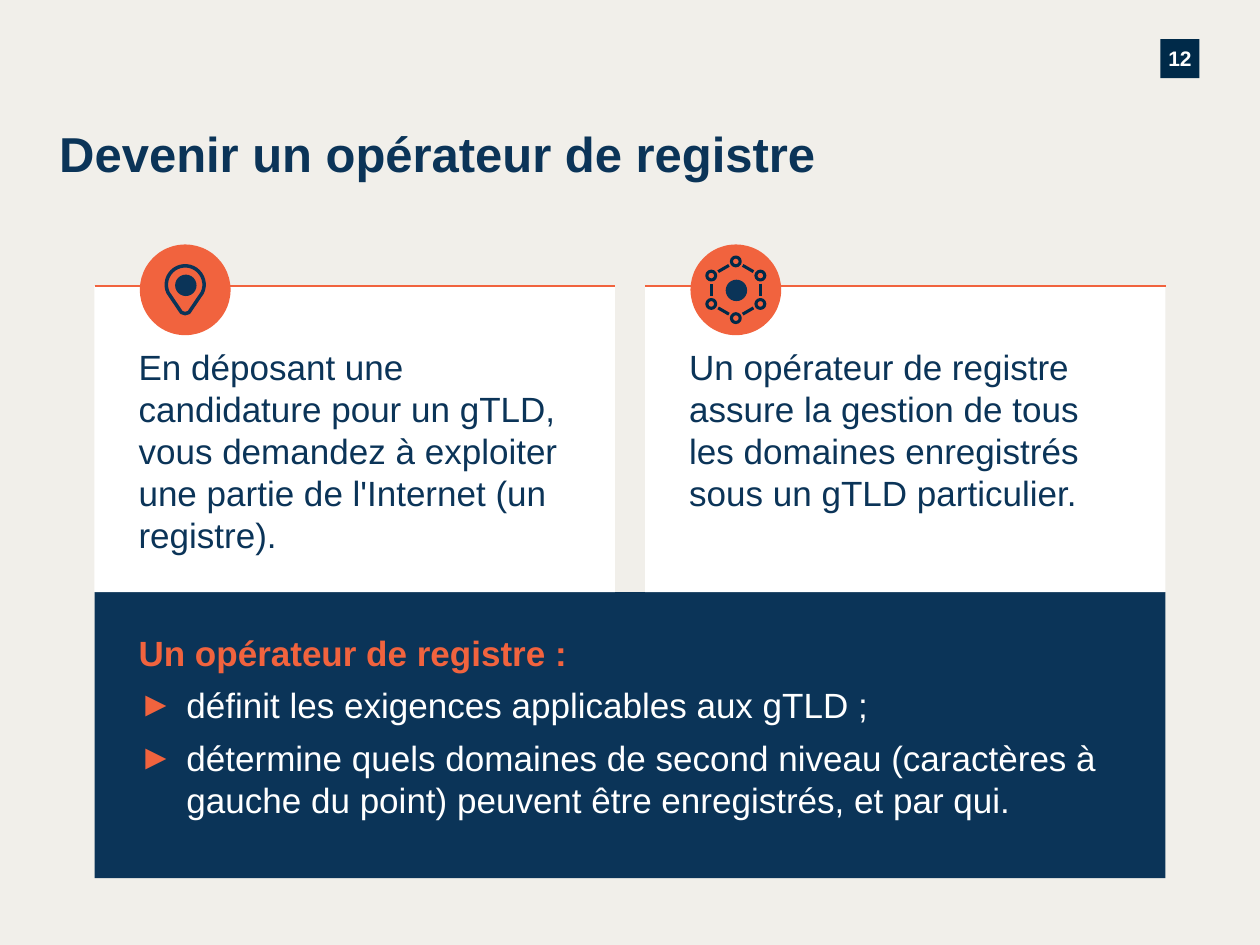
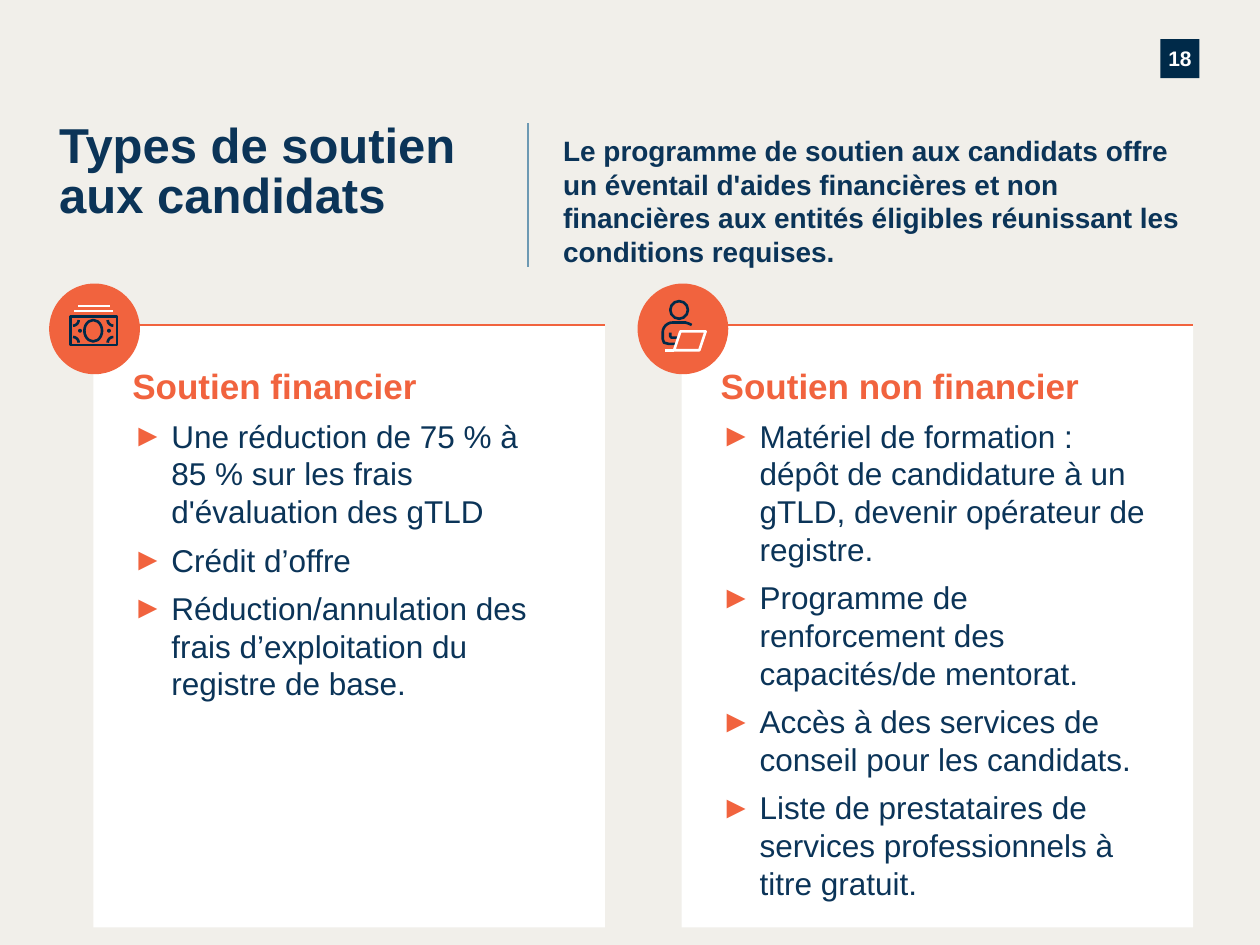
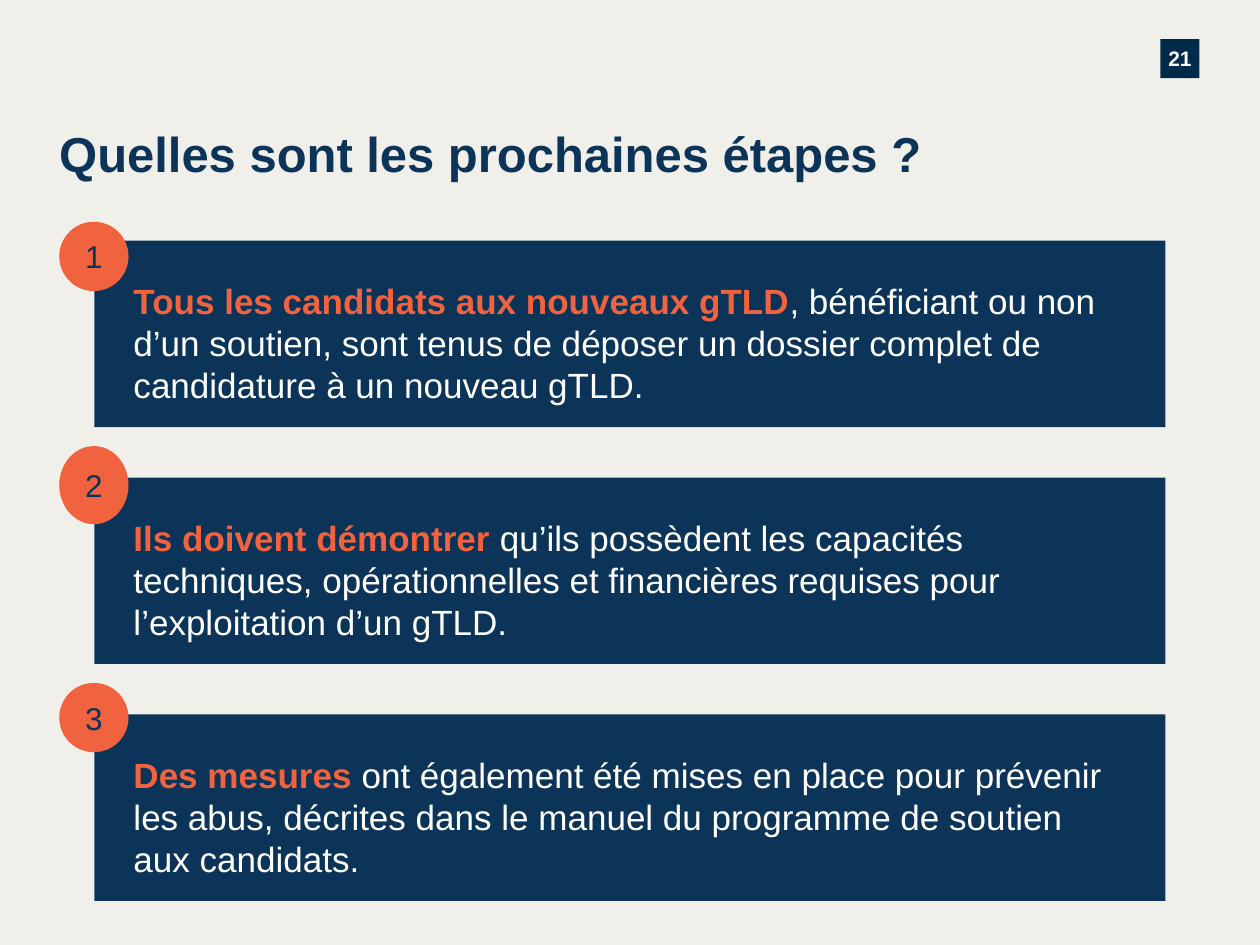
"""Build three slides on becoming a gTLD registry operator and on applicant support."""
from math import cos, radians, sin

from lxml.etree import SubElement
from pptx import Presentation
from pptx.dml.color import RGBColor
from pptx.enum.shapes import MSO_CONNECTOR, MSO_SHAPE
from pptx.enum.text import MSO_ANCHOR, MSO_AUTO_SIZE, PP_ALIGN
from pptx.oxml.ns import qn
from pptx.util import Inches, Pt

CREAM = RGBColor(0xF1, 0xEF, 0xEA)
NAVY = RGBColor(0x0B, 0x34, 0x58)
INK = RGBColor(0x00, 0x2A, 0x49)
ORANGE = RGBColor(0xF1, 0x63, 0x3E)
STEEL = RGBColor(0x6D, 0x99, 0xB3)
WHITE = RGBColor(0xFF, 0xFF, 0xFF)
FONT = "Arial"


def style(shape, fill=None, line=None, width=0, paragraphs=(), insets=(0, 0, 0, 0),
          align=PP_ALIGN.LEFT, anchor=MSO_ANCHOR.TOP, bullet_indent=0):
    """Paint a shape and write paragraphs of (text, size, colour, bold) spans; bullets follow the first."""
    shape.shadow.inherit = False
    if fill is None:
        shape.fill.background()
    else:
        shape.fill.solid()
        shape.fill.fore_color.rgb = fill
    if line is None:
        shape.line.fill.background()
    else:
        shape.line.color.rgb = line
        shape.line.width = Pt(width)
    if not paragraphs:
        return
    frame = shape.text_frame
    frame.word_wrap = True
    frame.auto_size = MSO_AUTO_SIZE.NONE
    frame.vertical_anchor = anchor
    frame.margin_left, frame.margin_top, frame.margin_right, frame.margin_bottom = map(Inches, insets)
    for number, spans in enumerate(paragraphs):
        para = frame.add_paragraph() if number else frame.paragraphs[0]
        properties = para._p.get_or_add_pPr()
        indent = Inches(bullet_indent) if number else 0
        properties.set("marL", str(indent))
        properties.set("indent", str(-indent))
        if number:
            bullet_color = SubElement(properties, qn("a:buClr"))
            SubElement(bullet_color, qn("a:srgbClr")).set("val", str(ORANGE))
            SubElement(properties, qn("a:buFont")).set("typeface", FONT)
            SubElement(properties, qn("a:buChar")).set("char", "►")
        else:
            SubElement(properties, qn("a:buNone"))
        para.alignment = align
        para.space_before = Pt(6 if number else 0)
        for text, size, color, bold in spans:
            span = para.add_run()
            span.text = text
            span.font.name = FONT
            span.font.size = Pt(size)
            span.font.bold = bold
            span.font.color.rgb = color


def draw_stroke(page, points, color, width, closed=False):
    """Draw a connector through two points, or an outline through more."""
    corners = [(Inches(x), Inches(y)) for x, y in points]
    if len(corners) == 2:
        stroke = page.shapes.add_connector(MSO_CONNECTOR.STRAIGHT, *corners[0], *corners[1])
        stroke.line.color.rgb = color
        stroke.line.width = Pt(width)
        SubElement(stroke._element.spPr, qn("a:effectLst"))
    else:
        builder = page.shapes.build_freeform(*corners[0])
        builder.add_line_segments(corners[1:], close=closed)
        style(builder.convert_to_shape(), line=color, width=width)


deck = Presentation()
deck.slide_width, deck.slide_height = Inches(10), Inches(7.5)
background = deck.slide_master.background.fill
background.solid()
background.fore_color.rgb = CREAM

pages = []
for number, heading, layout, title_width, title_height in [
    ("12", "Devenir un opérateur de registre", 1, 7.18, 0.57),
    ("18", "Types de soutien aux candidats", 3, 3.71, 0.92),
    ("21", "Quelles sont les prochaines étapes ?", 5, 7.57, 0.55),
]:
    page = deck.slides.add_slide(deck.slide_layouts[layout])
    title = page.shapes.title
    title.left, title.top, title.width, title.height = map(Inches, (0.47, 0.98, title_width, title_height))
    style(title, paragraphs=[[(heading, 28, NAVY, True)]])
    badge = page.shapes.add_shape(MSO_SHAPE.RECTANGLE, *map(Inches, (9.21, 0.31, 0.31, 0.31)))
    style(badge, INK, paragraphs=[[(number, 12, WHITE, True)]],
          align=PP_ALIGN.CENTER, anchor=MSO_ANCHOR.MIDDLE)
    pages.append(page)
operator_page, support_page, steps_page = pages

for left, text in [
    (0.75, "En déposant une candidature pour un gTLD, vous demandez à exploiter une partie "
           "de l'Internet (un registre)."),
    (5.12, "Un opérateur de registre assure la gestion de tous les domaines enregistrés sous "
           "un gTLD particulier."),
]:
    card = operator_page.shapes.add_shape(MSO_SHAPE.RECTANGLE, *map(Inches, (left, 2.27, 4.13, 2.43)))
    style(card, WHITE, paragraphs=[[(text, 20, NAVY, False)]], insets=(0.35, 0.47, 0.39, 0.3))
    draw_stroke(operator_page, [(left, 2.27), (left + 4.13, 2.27)], ORANGE, 1.25)
    disc = operator_page.shapes.add_shape(MSO_SHAPE.OVAL, *map(Inches, (left + 0.36, 1.94, 0.72, 0.72)))
    style(disc, ORANGE)

duties = operator_page.placeholders[1]
duties.left, duties.top, duties.width, duties.height = map(Inches, (0.75, 4.7, 8.5, 2.27))
style(duties, NAVY, paragraphs=[
    [("Un opérateur de registre :", 20, ORANGE, True)],
    [("définit les exigences applicables aux gTLD ;", 20, WHITE, False)],
    [("détermine quels domaines de second niveau (caractères à gauche du point) peuvent "
      "être enregistrés, et par qui.", 20, WHITE, False)],
], insets=(0.35, 0.31, 0.47, 0.3), bullet_indent=0.38)

for center_x, center_y in [(1.47, 2.26), (5.84, 2.3)]:
    dot = operator_page.shapes.add_shape(
        MSO_SHAPE.OVAL, *map(Inches, (center_x - 0.08, center_y - 0.08, 0.17, 0.17)))
    style(dot, NAVY)

pin_arc = [(1.47 + 0.15 * cos(radians(angle)), 2.26 + 0.15 * sin(radians(angle)))
           for angle in range(155, 386, 10)]
draw_stroke(operator_page, pin_arc + [(1.5, 2.48), (1.47, 2.49), (1.44, 2.48)], NAVY, 2, closed=True)

nodes = [(5.84 + 0.225 * cos(radians(angle)), 2.3 + 0.225 * sin(radians(angle)))
         for angle in range(-90, 270, 60)]
for (x, y), (next_x, next_y) in zip(nodes, nodes[1:] + nodes[:1]):
    link = [(x + (next_x - x) * share, y + (next_y - y) * share) for share in (0.28, 0.72)]
    draw_stroke(operator_page, link, INK, 1.75)
    node = operator_page.shapes.add_shape(MSO_SHAPE.OVAL, *map(Inches, (x - 0.035, y - 0.035, 0.07, 0.07)))
    style(node, line=INK, width=1.75)

for index, (left, heading, items) in enumerate([
    (0.74, "Soutien financier", [
        "Une réduction de 75 % à 85 % sur les frais d'évaluation des gTLD",
        "Crédit d’offre",
        "Réduction/annulation des frais d’exploitation du registre de base.",
    ]),
    (5.41, "Soutien non financier", [
        "Matériel de formation : dépôt de candidature à un gTLD, devenir opérateur de registre.",
        "Programme de renforcement des capacités/de mentorat.",
        "Accès à des services de conseil pour les candidats.",
        "Liste de prestataires de services professionnels à titre gratuit.",
    ]),
], start=1):
    card = support_page.placeholders[index]
    card.left, card.top, card.width, card.height = map(Inches, (left, 2.58, 4.06, 4.78))
    style(card, WHITE, insets=(0.31, 0.31, 0.35, 0.3), bullet_indent=0.31,
          paragraphs=[[(heading, 20, ORANGE, True)]] + [[(item, 18, NAVY, False)] for item in items])
    draw_stroke(support_page, [(left, 2.58), (left + 4.06, 2.58)], ORANGE, 1.25)
    disc = support_page.shapes.add_shape(MSO_SHAPE.OVAL, *map(Inches, (left - 0.35, 2.25, 0.72, 0.72)))
    style(disc, ORANGE)

summary = support_page.shapes.add_textbox(*map(Inches, (4.47, 1.06, 4.94, 1.06)))
style(summary, paragraphs=[[(
    "Le programme de soutien aux candidats offre un éventail d'aides financières et non "
    "financières aux entités éligibles réunissant les conditions requises.", 16, NAVY, True)]])
support_page.shapes.title.text_frame.paragraphs[0].line_spacing = Pt(28.6)
draw_stroke(support_page, [(4.19, 0.98), (4.19, 2.12)], STEEL, 1.25)

for preset, *place in [
    (MSO_SHAPE.RECTANGLE, 0.56, 2.51, 0.37, 0.23),
    (MSO_SHAPE.OVAL, 0.67, 2.54, 0.14, 0.17),
    (MSO_SHAPE.OVAL, 0.63, 2.62, 0.01, 0.01),
    (MSO_SHAPE.OVAL, 0.86, 2.62, 0.01, 0.01),
    (MSO_SHAPE.OVAL, 5.32, 2.39, 0.14, 0.14),
]:
    outline = support_page.shapes.add_shape(preset, *map(Inches, place))
    style(outline, line=INK, width=1.5)

for corner_x, corner_y, start in [(0.58, 2.54, 0), (0.9, 2.54, 90), (0.9, 2.72, 180), (0.58, 2.72, 270)]:
    arc = [(corner_x + 0.045 * cos(radians(angle)), corner_y + 0.045 * sin(radians(angle)))
           for angle in range(start, start + 91, 15)]
    draw_stroke(support_page, arc, INK, 1.5)

shoulder = [(5.34 + 0.08 * cos(radians(angle)), 2.64 + 0.08 * sin(radians(angle)))
            for angle in range(270, 179, -15)]
torso = [(5.49, 2.58), (5.47, 2.57), (5.44, 2.56)] + shoulder
torso += [(5.26, 2.69), (5.27, 2.72), (5.31, 2.73), (5.37, 2.73)]
for points, color, closed in [
    ([(0.59, 2.47), (0.9, 2.47)], WHITE, False),
    ([(0.62, 2.43), (0.87, 2.43)], WHITE, False),
    ([(5.38, 2.68), (5.33, 2.68), (5.32, 2.67), (5.32, 2.64)], INK, False),
    (torso, INK, False),
    ([(5.28, 2.78), (5.35, 2.78)], WHITE, False),
    ([(5.4, 2.63), (5.35, 2.78), (5.55, 2.78), (5.6, 2.63)], WHITE, True),
]:
    draw_stroke(support_page, points, color, 1.5, closed)

for index, (lead, rest, disc_top, disc_height) in enumerate([
    ("Tous les candidats aux nouveaux gTLD",
     ", bénéficiant ou non d’un soutien, sont tenus de déposer un dossier complet de "
     "candidature à un nouveau gTLD.", 1.76, 0.55),
    ("Ils doivent démontrer ",
     "qu’ils possèdent les capacités techniques, opérationnelles et financières requises "
     "pour l’exploitation d’un gTLD.", 3.54, 0.62),
    ("Des mesures",
     " ont également été mises en place pour prévenir les abus, décrites dans le manuel du "
     "programme de soutien aux candidats.", 5.42, 0.55),
]):
    band = steps_page.shapes.add_shape(
        MSO_SHAPE.RECTANGLE, *map(Inches, (0.75, 1.91 + 1.88 * index, 8.5, 1.48)))
    style(band, NAVY, paragraphs=[[(lead, 20, ORANGE, True), (rest, 20, WHITE, False)]],
          insets=(0.31, 0.31, 0.35, 0.31))
    disc = steps_page.shapes.add_shape(MSO_SHAPE.OVAL, *map(Inches, (0.47, disc_top, 0.55, disc_height)))
    style(disc, ORANGE, paragraphs=[[(str(index + 1), 18, NAVY, False)]],
          insets=(0.1, 0.05, 0.1, 0.05), align=PP_ALIGN.CENTER, anchor=MSO_ANCHOR.MIDDLE)

deck.save("out.pptx")
